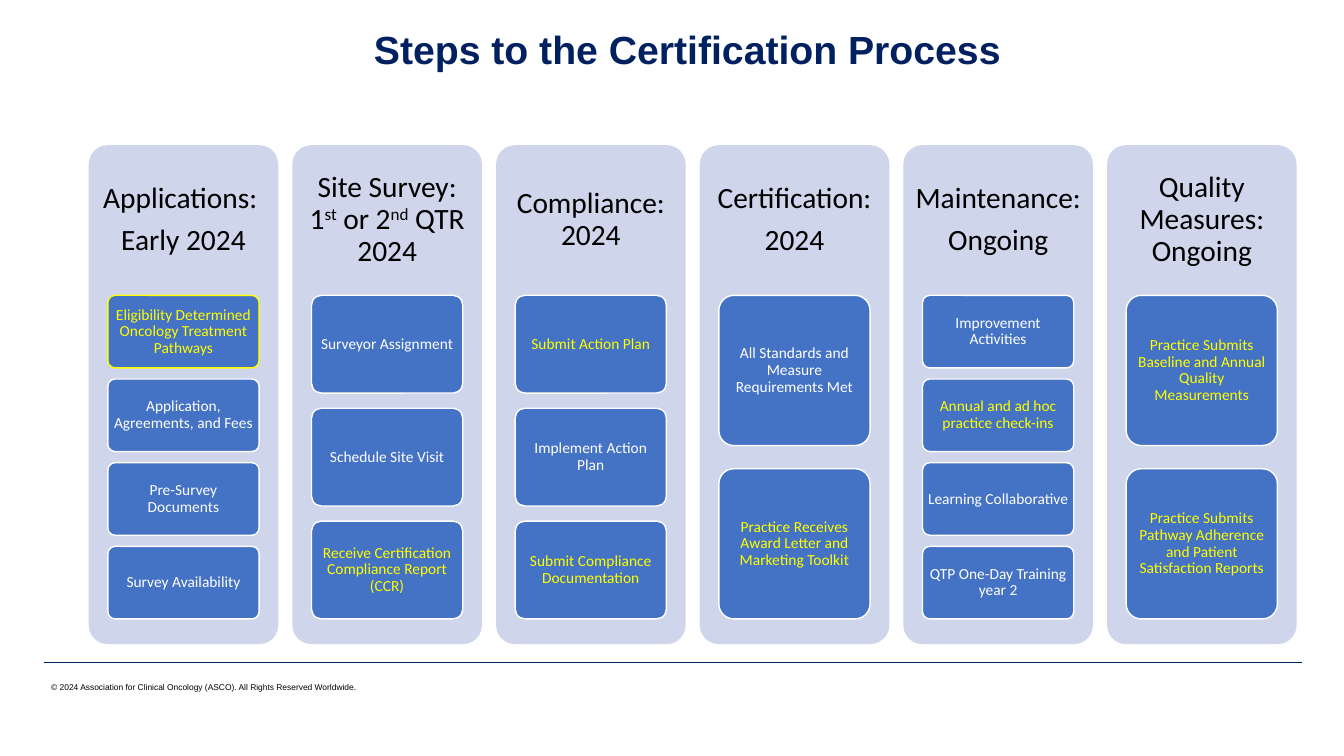
"""Build the slide of steps to the certification process."""
from dataclasses import dataclass

from pptx import Presentation
from pptx.dml.color import RGBColor as RGB
from pptx.enum.shapes import MSO_CONNECTOR as LINK, MSO_SHAPE as SHAPE
from pptx.enum.text import MSO_ANCHOR as ANCHOR, MSO_AUTO_SIZE as AUTO, PP_ALIGN as ALIGN
from pptx.oxml.ns import qn
from pptx.util import Emu, Pt

PX = 9144


@dataclass(frozen=True)
class Theme:
    navy: str = "002060"
    rule: str = "002557"
    panel: str = "CFD5EA"
    blue: str = "4472C4"
    hot: str = "FFFF00"
    white: str = "FFFFFF"
    black: str = "000000"
    head: str = "Arial"
    body: str = "Calibri"
    title: int = 28
    group: int = 21
    step: int = 11
    note: int = 6


LOOK = Theme()
HOT = LOOK.hot

GROUPS = [
    (["Applications: ", "Early 2024"], [
        ("Eligibility Determined Oncology Treatment Pathways", HOT, HOT),
        ("Application, Agreements, and Fees",),
        ("Pre-Survey Documents",),
        ("Survey Availability",)]),
    (["Site Survey:|1^st^ or 2^nd^ QTR 2024"], [
        ("Surveyor Assignment",),
        ("Schedule Site Visit",),
        ("Receive Certification Compliance Report (CCR)", HOT)]),
    (["Compliance: 2024"], [
        ("Submit Action Plan", HOT),
        ("Implement Action Plan",),
        ("Submit Compliance Documentation", HOT)]),
    (["Certification:", "2024"], [
        ("All Standards and Measure Requirements Met",),
        ("Practice Receives Award Letter and Marketing Toolkit", HOT)]),
    (["Maintenance: ", "Ongoing"], [
        ("Improvement Activities",),
        ("Annual and ad hoc practice check-ins", HOT),
        ("Learning Collaborative",),
        ("QTP One-Day Training year 2",)]),
    (["Quality Measures: Ongoing"], [
        ("Practice Submits Baseline and Annual Quality Measurements", HOT),
        ("Practice Submits Pathway Adherence and Patient Satisfaction Reports", HOT)]),
]


def px(*vals):
    return [Emu(round(v) * PX) for v in vals]


def put(item, **vals):
    for name, val in vals.items():
        setattr(item, name, val)


class Deck:
    """Draw styled elements on the current slide."""

    def __init__(self, look):
        self.look = look
        self.show = Presentation()
        wide, high = px(1333, 750)
        put(self.show, slide_width=wide, slide_height=high)
        self.slide = self.show.slides.add_slide(self.show.slide_layouts[5])

    def words(self, frame, lines, size, tone, face, pad, align=ALIGN.CENTER, bold=False):
        left, top, right, low = px(*pad)
        put(frame, word_wrap=True, auto_size=AUTO.NONE, vertical_anchor=ANCHOR.MIDDLE,
            margin_left=left, margin_top=top, margin_right=right, margin_bottom=low)
        for num, line in enumerate(lines):
            para = frame.add_paragraph() if num else frame.paragraphs[0]
            put(para, alignment=align, line_spacing=0.9, space_before=Pt(7 if num else 0))
            for row, piece in enumerate(line.split("|")):
                if row:
                    para.add_line_break()
                for odd, text in enumerate(piece.split("^")):
                    run = para.add_run()
                    run.text = text
                    put(run.font, size=Pt(size), name=face, bold=bold)
                    run.font.color.rgb = RGB.from_string(tone)
                    if odd % 2:
                        run.font._element.set("baseline", "30000")

    def title(self, text, box):
        item = self.slide.shapes.title
        left, top, wide, high = px(*box)
        put(item, left=left, top=top, width=wide, height=high)
        self.words(item.text_frame, [text], self.look.title, self.look.navy,
                   self.look.head, (10, 5, 10, 45), bold=True)

    def text(self, lines, box, size, face, pad, align=ALIGN.CENTER):
        item = self.slide.shapes.add_textbox(*px(*box))
        self.words(item.text_frame, lines, size, self.look.black, face, pad, align)

    def round(self, box, fill, edge=None):
        item = self.slide.shapes.add_shape(SHAPE.ROUNDED_RECTANGLE, *px(*box))
        item.shadow.inherit = False
        item.adjustments[0] = 0.1
        item.fill.solid()
        item.fill.fore_color.rgb = RGB.from_string(fill)
        if edge:
            item.line.color.rgb = RGB.from_string(edge)
            item.line.width = Pt(1)
        else:
            item.line.fill.background()
        return item

    def step(self, box, text, tone=LOOK.white, edge=LOOK.white):
        item = self.round(box, self.look.blue, edge)
        self.words(item.text_frame, [text], self.look.step, tone, self.look.body, (3, 2, 3, 2))

    def group(self, left, heads, steps):
        self.round((left, 144, 188, 495), self.look.panel)
        self.text(heads, (left, 144, 188, 148), self.look.group, self.look.body, (9, 9, 9, 9))
        gap = 0.154
        high = 321 / (len(steps) + gap * (len(steps) - 1))
        for num, step in enumerate(steps):
            self.step((left + 19, 293 + num * high * (1 + gap), 150, high), *step)

    def rule(self, ends):
        item = self.slide.shapes.add_connector(LINK.STRAIGHT, *px(*ends))
        item.line.color.rgb = RGB.from_string(self.look.rule)
        item.line.width = Pt(0.25)
        props = item._element.spPr
        props.append(props.makeelement(qn("a:effectLst"), {}))


def main():
    deck = Deck(LOOK)
    deck.rule((44, 657, 1291, 657))
    deck.title("Steps to the Certification Process ", (87, 9, 1200, 125))
    for num, (heads, steps) in enumerate(GROUPS):
        deck.group(88 + 202 * num, heads, steps)
    deck.text(["© 2024 Association for Clinical Oncology (ASCO). All Rights Reserved Worldwide."],
              (41, 662, 450, 40), LOOK.note, LOOK.head, (10, 5, 10, 5), ALIGN.LEFT)
    deck.show.save("out.pptx")


if __name__ == "__main__":
    main()
